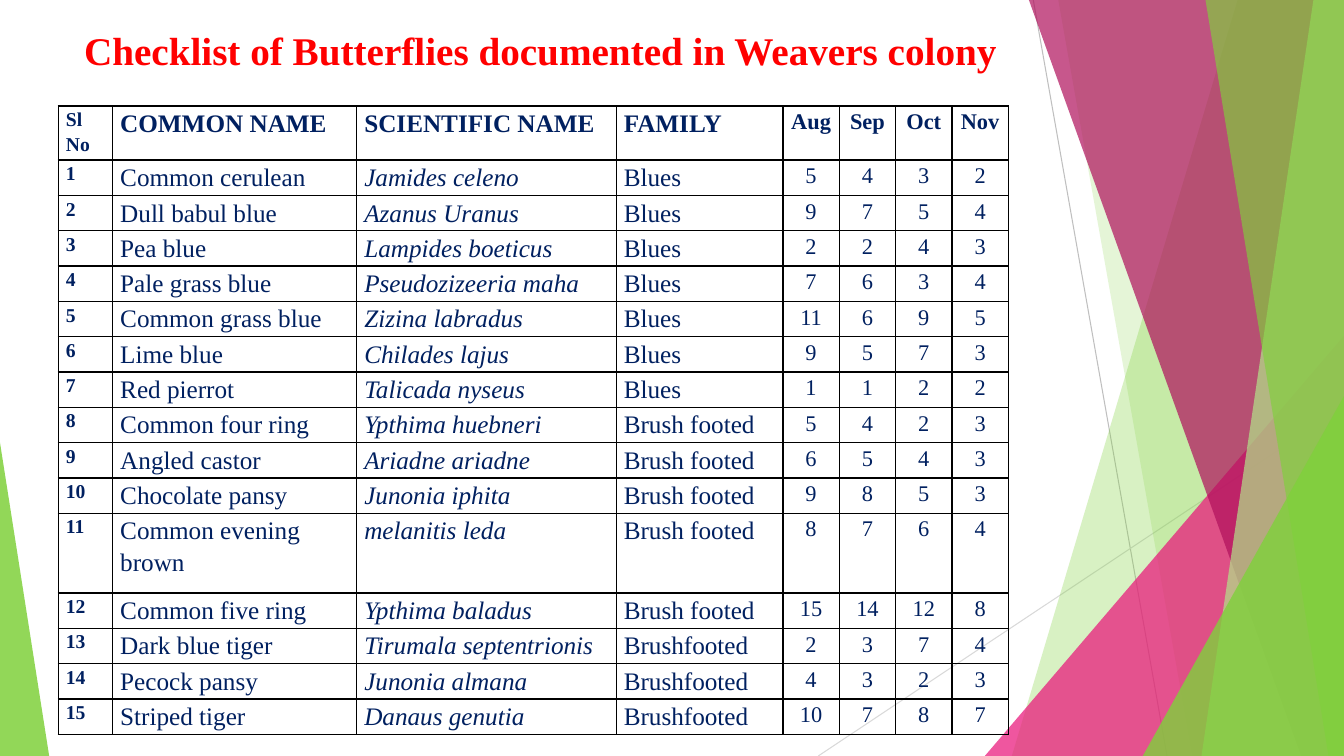
import dataclasses

import lxml.etree
import pptx
import pptx.dml.color
import pptx.enum.shapes
import pptx.enum.text
import pptx.oxml.ns
import pptx.util

Cm = pptx.util.Cm
Pt = pptx.util.Pt
qn = pptx.oxml.ns.qn
WIDTH, HEIGHT = 33.87, 19.05


@dataclasses.dataclass(frozen=True)
class Theme:
    font: str = "Times New Roman"
    title: str = "FF0000"
    text: str = "002060"
    border: str = "000000"
    green: str = "7FD13B"
    pale_green: str = "B2E389"
    pink: str = "EA157A"
    plum: str = "B0105C"
    grey: str = "BFBFBF"
    pale_grey: str = "D9D9D9"
    title_size: int = 28
    name_size: int = 18
    count_size: int = 16
    number_size: int = 14


class SlideBuilder:
    def __init__(self, presentation, theme):
        self.theme = theme
        self.slide = presentation.slides.add_slide(presentation.slide_layouts[5])
        self.shapes = self.slide.shapes

    def text_run(self, paragraph, text, size, color, bold=False, italic=False):
        run = paragraph.add_run()
        run.text = text
        run.font.name = self.theme.font
        run.font.size = Pt(size)
        run.font.bold = bold
        run.font.italic = italic
        run.font.color.rgb = pptx.dml.color.RGBColor.from_string(color)

    def paint(self, shape, color, opacity):
        shape.shadow.inherit = False
        shape.line.fill.background()
        shape.fill.solid()
        shape.fill.fore_color.rgb = pptx.dml.color.RGBColor.from_string(color)
        tone = shape._element.spPr.find(qn("a:solidFill"))[0]
        lxml.etree.SubElement(tone, qn("a:alpha"), val=str(opacity * 1000))

    def line(self, start, end, color):
        points = [Cm(value) for value in (*start, *end)]
        connector = self.shapes.add_connector(pptx.enum.shapes.MSO_CONNECTOR.STRAIGHT, *points)
        connector.line.color.rgb = pptx.dml.color.RGBColor.from_string(color)
        connector.line.width = Pt(0.75)
        lxml.etree.SubElement(connector._element.spPr, qn("a:effectLst"))

    def band(self, top_left, bottom_left, color, opacity):
        corners = [(top_left, 0), (WIDTH, 0), (WIDTH, HEIGHT), (bottom_left, HEIGHT)]
        points = [(Cm(x), Cm(y)) for x, y in corners]
        builder = self.shapes.build_freeform(*points[0])
        builder.add_line_segments(points[1:], close=True)
        self.paint(builder.convert_to_shape(), color, opacity)

    def triangle(self, left, top, width, apex, color, opacity):
        shape = self.shapes.add_shape(
            pptx.enum.shapes.MSO_SHAPE.ISOSCELES_TRIANGLE,
            Cm(left), Cm(top), Cm(width), Cm(HEIGHT - top))
        shape.adjustments[0] = apex
        self.paint(shape, color, opacity)

    def title(self, text, left, top, width, height):
        title = self.shapes.title
        title.left, title.top, title.width, title.height = map(Cm, (left, top, width, height))
        self.shapes._spTree.append(title._element)
        frame = title.text_frame
        frame.word_wrap = False
        frame.auto_size = pptx.enum.text.MSO_AUTO_SIZE.SHAPE_TO_FIT_TEXT
        frame.vertical_anchor = pptx.enum.text.MSO_ANCHOR.MIDDLE
        paragraph = frame.paragraphs[0]
        paragraph.alignment = pptx.enum.text.PP_ALIGN.CENTER
        self.text_run(paragraph, text, self.theme.title_size, self.theme.title, bold=True)

    def cell(self, cell, text, size, bold, italic, centred):
        cell.margin_left = cell.margin_right = Cm(0.19)
        cell.margin_top = cell.margin_bottom = 0
        properties = cell._tc.get_or_add_tcPr()
        for side in ("a:lnL", "a:lnR", "a:lnT", "a:lnB"):
            border = lxml.etree.SubElement(properties, qn(side), w=str(Pt(1)))
            fill = lxml.etree.SubElement(border, qn("a:solidFill"))
            lxml.etree.SubElement(fill, qn("a:srgbClr"), val=self.theme.border)
        cell.fill.background()
        paragraph = cell.text_frame.paragraphs[0]
        paragraph.line_spacing = 1.15
        align = pptx.enum.text.PP_ALIGN
        paragraph.alignment = align.CENTER if centred else align.LEFT
        self.text_run(paragraph, text, size, self.theme.text, bold, italic)

    def table(self, rows, left, top, widths, heights):
        table = self.shapes.add_table(
            len(rows), len(widths), Cm(left), Cm(top), Cm(sum(widths)), Cm(sum(heights))).table
        table.first_row = table.horz_banding = False
        for column, width in zip(table.columns, widths):
            column.width = Cm(width)
        for row, height in zip(table.rows, heights):
            row.height = Cm(height)
        theme = self.theme
        sizes = [theme.number_size] + [theme.name_size] * 3 + [theme.count_size] * 4
        for r, values in enumerate(rows):
            for c, value in enumerate(values):
                self.cell(table.cell(r, c), str(value), sizes[c],
                          bold=r == 0 or c == 0, italic=r > 0 and c == 2, centred=c > 3)


HEADER = ("Sl No", "COMMON NAME", "SCIENTIFIC NAME", "FAMILY", "Aug", "Sep", "Oct", "Nov")
BUTTERFLIES = [
    ("Common cerulean", "Jamides celeno", "Blues", 5, 4, 3, 2),
    ("Dull babul blue", "Azanus Uranus", "Blues", 9, 7, 5, 4),
    ("Pea blue", "Lampides boeticus", "Blues", 2, 2, 4, 3),
    ("Pale grass blue", "Pseudozizeeria maha", "Blues", 7, 6, 3, 4),
    ("Common grass blue", "Zizina labradus", "Blues", 11, 6, 9, 5),
    ("Lime blue", "Chilades lajus", "Blues", 9, 5, 7, 3),
    ("Red pierrot", "Talicada nyseus", "Blues", 1, 1, 2, 2),
    ("Common four ring", "Ypthima huebneri", "Brush footed", 5, 4, 2, 3),
    ("Angled castor", "Ariadne ariadne", "Brush footed", 6, 5, 4, 3),
    ("Chocolate pansy", "Junonia iphita", "Brush footed", 9, 8, 5, 3),
    ("Common evening brown", "melanitis leda", "Brush footed", 8, 7, 6, 4),
    ("Common five ring", "Ypthima baladus", "Brush footed", 15, 14, 12, 8),
    ("Dark blue tiger", "Tirumala septentrionis", "Brushfooted", 2, 3, 7, 4),
    ("Pecock pansy", "Junonia almana", "Brushfooted", 4, 3, 2, 3),
    ("Striped tiger", "Danaus genutia", "Brushfooted", 10, 7, 8, 7),
]


def main():
    presentation = pptx.Presentation()
    presentation.slide_width, presentation.slide_height = Cm(WIDTH), Cm(HEIGHT)
    theme = Theme()
    builder = SlideBuilder(presentation, theme)

    builder.line((26.04, 0), (29.41, HEIGHT), theme.grey)
    builder.line((WIDTH, 10.24), (20.62, HEIGHT), theme.pale_grey)
    builder.band(31.19, 25.5, theme.green, 30)
    builder.band(26.67, 30.05, theme.green, 20)
    builder.triangle(24.82, 8.46, 9.05, 1, theme.pink, 72)
    builder.band(25.93, 32.79, theme.plum, 70)
    builder.band(33.1, 30.28, theme.pale_green, 70)
    builder.band(30.38, 33.48, theme.green, 65)
    builder.triangle(28.8, 9.98, 5.07, 1, theme.green, 80)
    builder.triangle(0, 11.15, 1.24, 0, theme.green, 85)

    builder.title("Checklist of Butterflies documented in Weavers colony", 1.73, 0.53, 23.77, 1.45)
    rows = [HEADER] + [(number, *entry) for number, entry in enumerate(BUTTERFLIES, 1)]
    heights = [1.17] + [2.01 if entry[0] == "Common evening brown" else 0.89 for entry in BUTTERFLIES]
    builder.table(rows, 1.47, 2.67, [1.37, 6.15, 6.54, 4.2] + [1.42] * 4, heights)
    presentation.save("out.pptx")


if __name__ == "__main__":
    main()
